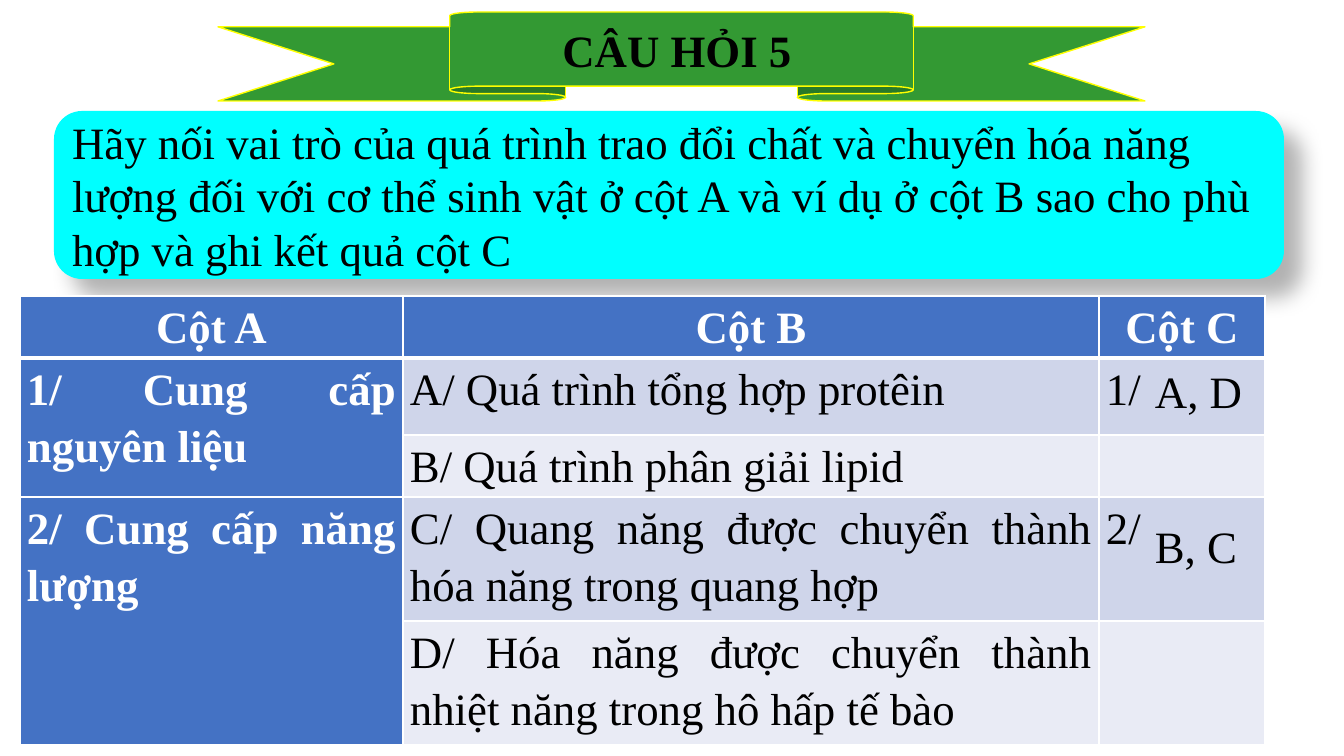
from lxml.etree import SubElement
from pptx import Presentation
from pptx.dml.color import RGBColor
from pptx.enum.shapes import MSO_SHAPE as SHAPE
from pptx.enum.text import MSO_ANCHOR as ANCHOR, PP_ALIGN as ALIGN
from pptx.oxml import parse_xml
from pptx.oxml.ns import nsdecls, qn
from pptx.util import Emu, Pt

# Content
TITLE = "CÂU HỎI 5"
QUESTION = ("Hãy nối vai trò của quá trình trao đổi chất và chuyển hóa năng "
            "lượng đối với cơ thể sinh vật ở cột A và ví dụ ở cột B sao cho "
            "phù hợp và ghi kết quả cột C")
ROWS = [
    ("Cột A", "Cột B", "Cột C"),
    ("1/ Cung cấp nguyên liệu", "A/ Quá trình tổng hợp protêin", "1/ "),
    ("", "B/ Quá trình phân giải lipid", ""),
    ("2/ Cung cấp năng lượng",
     "C/ Quang năng được chuyển thành hóa năng trong quang hợp", "2/ "),
    ("", "D/ Hóa năng được chuyển thành nhiệt năng trong hô hấp tế bào", ""),
]
ANSWERS = [("A, D", 359), ("B, C", 514)]  # text, top

# Layout in px
COL_WIDTHS = (383, 696, 166)
ROW_HEIGHTS = (62, 77, 62, 124, 123)
TABLE_LEFT, TABLE_TOP = 20, 296
CELL_INSET = 7

FONT, SIZE = "Times New Roman", Pt(32)
BLACK = RGBColor(0x00, 0x00, 0x00)
WHITE = RGBColor(0xFF, 0xFF, 0xFF)
GREEN = RGBColor(0x33, 0x99, 0x33)
YELLOW = RGBColor(0xFF, 0xFF, 0x00)
CYAN = RGBColor(0x00, 0xFF, 0xFF)
BLUE = RGBColor(0x44, 0x72, 0xC4)
BANDS = (RGBColor(0xE9, 0xEB, 0xF5), RGBColor(0xCF, 0xD5, 0xEA))


def px(n):
    return Emu(round(n * 914400 / 100.8))


def box(*lengths):
    return [px(n) for n in lengths]


def write(tf, text, color=BLACK, bold=False, align=ALIGN.LEFT):
    tf.word_wrap = True
    p = tf.paragraphs[0]
    p.alignment = align
    r = p.add_run()
    r.text = text
    r.font.name, r.font.size, r.font.bold = FONT, SIZE, bold
    r.font.color.rgb = color
    return p


def add_shape(kind, bounds, fill):
    sp = s.shapes.add_shape(kind, *box(*bounds))
    sp.shadow.inherit = False
    sp.fill.solid()
    sp.fill.fore_color.rgb = fill
    return sp


def add_text(bounds, text, **style):
    write(s.shapes.add_textbox(*box(*bounds)).text_frame, text, **style)


def set_borders(cell, top, bottom):
    tc_pr = cell._tc.get_or_add_tcPr()
    sides = (("lnL", 1), ("lnR", 1), ("lnT", top), ("lnB", bottom))
    for i, (side, width) in enumerate(sides):
        tc_pr.insert(i, parse_xml(
            f'<a:{side} {nsdecls("a")} w="{Pt(width)}"><a:solidFill>'
            f'<a:srgbClr val="{WHITE}"/></a:solidFill></a:{side}>'))


prs = Presentation()
prs.slide_width, prs.slide_height = box(1344, 756)
s = prs.slides.add_slide(prs.slide_layouts[6])

# Title ribbon
ribbon = add_shape(SHAPE.UP_RIBBON, (218, 12, 927, 89), GREEN)
ribbon.line.color.rgb = YELLOW
ribbon.line.width = Pt(1)
add_text((448, 18, 458, 65), TITLE, bold=True, align=ALIGN.CENTER)

# Question panel with a soft shadow
panel = add_shape(SHAPE.ROUNDED_RECTANGLE, (54, 111, 1230, 168), CYAN)
panel.line.fill.background()
panel.text_frame.vertical_anchor = ANCHOR.MIDDLE
write(panel.text_frame, QUESTION)
effects = panel._element.spPr.find(qn("a:effectLst"))
shadow = SubElement(effects, qn("a:outerShdw"), blurRad=str(Pt(15)),
                    dist=str(Pt(18)), dir="2700000", algn="tl")
shade = SubElement(shadow, qn("a:srgbClr"), val=str(BLACK))
SubElement(shade, qn("a:alpha"), val="30000")

# Matching table
table = s.shapes.add_table(
    len(ROWS), len(COL_WIDTHS),
    *box(TABLE_LEFT, TABLE_TOP, sum(COL_WIDTHS), sum(ROW_HEIGHTS))).table
for col, width in zip(table.columns, COL_WIDTHS):
    col.width = px(width)
for row, height in zip(table.rows, ROW_HEIGHTS):
    row.height = px(height)

for i, texts in enumerate(ROWS):
    for j, text in enumerate(texts):
        cell = table.cell(i, j)
        heading = i == 0 or j == 0
        cell.margin_left = cell.margin_right = px(CELL_INSET)
        cell.margin_top = cell.margin_bottom = 0
        cell.fill.solid()
        cell.fill.fore_color.rgb = BLUE if heading else BANDS[i % 2]
        set_borders(cell, 3 if i == 1 else 1, 3 if i == 0 else 1)
        if text:
            p = write(cell.text_frame, text, WHITE if heading else BLACK,
                      heading, ALIGN.CENTER if i == 0 else ALIGN.JUSTIFY)
            p.line_spacing = 1.15
for i in (1, 3):
    table.cell(i, 0).merge(table.cell(i + 1, 0))

# Answers
for text, top in ANSWERS:
    add_text((1145, top, 129, 65), text)

prs.save("out.pptx")
